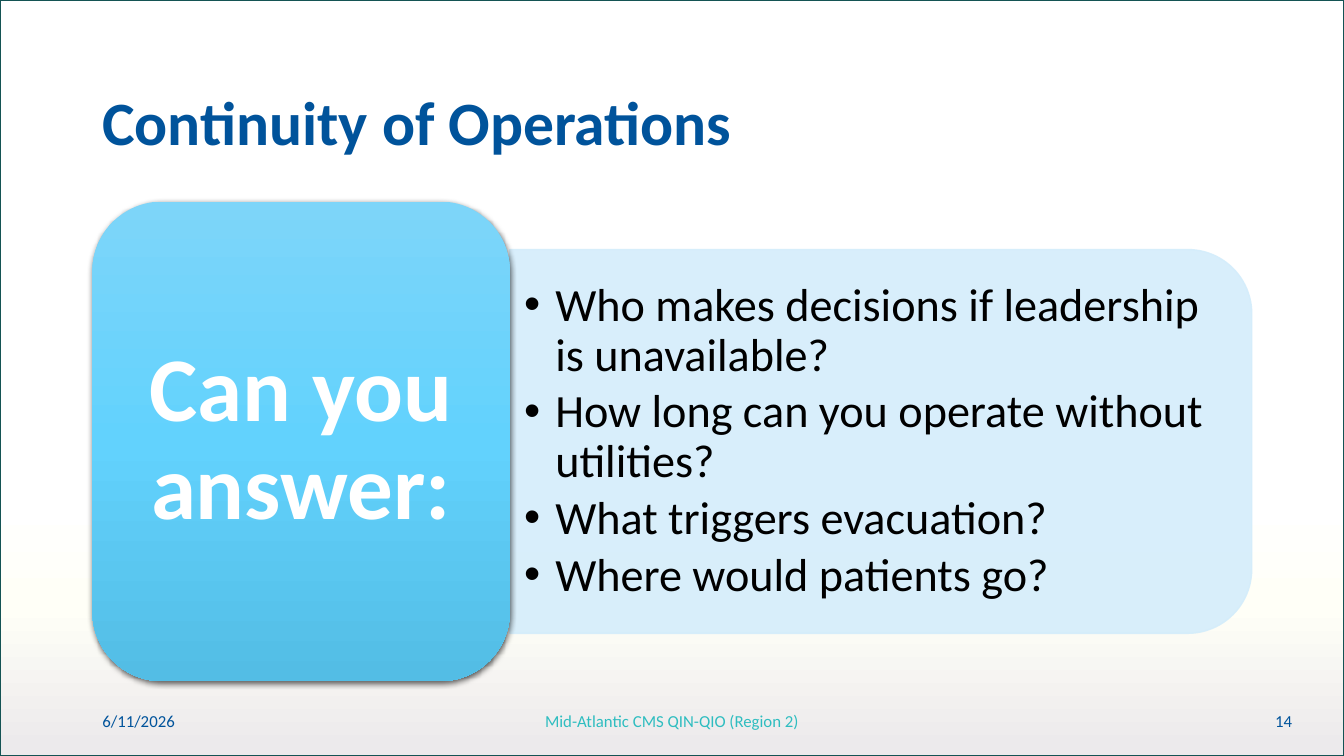
from dataclasses import dataclass
from typing import NamedTuple

from lxml.etree import SubElement
from pptx import Presentation
from pptx.dml.color import RGBColor
from pptx.enum.shapes import MSO_SHAPE
from pptx.enum.text import MSO_ANCHOR, PP_ALIGN
from pptx.oxml.ns import qn
from pptx.util import Inches, Pt

COLORS = {
    "navy": "00539B", "teal": "2EBDC0", "frame": "145354", "panel": "D4EDFB",
    "white": "FFFFFF", "black": "000000", "ivory": "FFFFF7", "mist": "ECEAEC",
    "sky_light": "7DD5F9", "sky": "62D2FD", "sky_deep": "53BDE5",
}
COLS, ROWS = 160, 90
WIDTH, HEIGHT = Inches(13.33), Inches(7.5)


class Area(NamedTuple):
    col: float
    row: float
    cols: float
    rows: float

    def emu(self) -> tuple[int, int, int, int]:
        return (round(self.col * WIDTH / COLS), round(self.row * HEIGHT / ROWS),
                round(self.cols * WIDTH / COLS), round(self.rows * HEIGHT / ROWS))


@dataclass(frozen=True)
class Label:
    area: Area
    lines: tuple[str, ...]
    size: int
    color: str
    bold: bool = False
    align: PP_ALIGN = PP_ALIGN.LEFT
    inset: tuple[float, float] = (0.1, 0.05)
    line_spacing: float = 1.0
    space_after: float = 0
    bulleted: bool = False


FOOTER_ROW, FOOTER_ROWS = 83.4, 4.8
CARD = Area(11, 24, 49.7, 57.1)
PANEL = Area(82, 8.4, 45.7, 88.3)

LABELS = (
    Label(Area(11, 10.3, 103.7, 9.2), ("Continuity of Operations",), 44, "navy",
          bold=True, line_spacing=0.9),
    Label(Area(11, FOOTER_ROW, 22.2, FOOTER_ROWS), ("6/11/2026",), 12, "navy"),
    Label(Area(53, FOOTER_ROW, 54, FOOTER_ROWS),
          ("Mid-Atlantic CMS QIN-QIO (Region 2)",), 12, "teal", align=PP_ALIGN.CENTER),
    Label(Area(119, FOOTER_ROW, 36, FOOTER_ROWS), ("14",), 12, "navy",
          align=PP_ALIGN.RIGHT),
    Label(Area(60.7, 31.9, 86, 41.3),
          ("Who makes decisions if leadership is unavailable?",
           "How long can you operate without utilities?",
           "What triggers evacuation?",
           "Where would patients go?"),
          33, "black", inset=(0.14, 0.07), line_spacing=0.9, space_after=5,
          bulleted=True),
    Label(Area(13.4, 26.4, 44.9, 52.2), ("Can you answer:",), 65, "white", bold=True,
          align=PP_ALIGN.CENTER, inset=(0.27, 0.14), line_spacing=0.9),
)


def rgb(name: str) -> RGBColor:
    return RGBColor.from_string(COLORS[name])


def add_block(slide, kind: MSO_SHAPE, area: Area):
    sp = slide.shapes.add_shape(kind, *area.emu())
    sp.shadow.inherit = False
    return sp


def fill_down(sp, stops: dict[int, str]) -> None:
    """Fill top to bottom, with stops given as percent and colour name."""
    sp.fill.gradient()
    sp.fill.gradient_angle = 270
    stop_list = sp._element.spPr.find(qn("a:gradFill")).find(qn("a:gsLst"))
    stop_list.clear()
    for percent, name in stops.items():
        gs = SubElement(stop_list, qn("a:gs"), pos=str(percent * 1000))
        SubElement(gs, qn("a:srgbClr"), val=COLORS[name])


def set_alpha(fill_element, percent: int) -> None:
    color = fill_element.find(qn("a:solidFill")).find(qn("a:srgbClr"))
    SubElement(color, qn("a:alpha"), val=str(percent * 1000))


def add_backdrop(slide) -> None:
    sp = add_block(slide, MSO_SHAPE.RECTANGLE, Area(0, 0, COLS, ROWS))
    fill_down(sp, {66: "white", 80: "ivory", 99: "mist"})
    sp.line.color.rgb = rgb("frame")
    sp.line.width = Pt(1.5)


def add_panel(slide) -> None:
    sp = add_block(slide, MSO_SHAPE.ROUND_2_SAME_RECTANGLE, PANEL)
    sp.rotation = 90
    sp.fill.solid()
    sp.fill.fore_color.rgb = rgb("panel")
    sp.line.color.rgb = rgb("panel")
    sp.line.width = Pt(1)
    spPr = sp._element.spPr
    for part in (spPr, spPr.find(qn("a:ln"))):
        set_alpha(part, 90)


def add_card(slide) -> None:
    sp = add_block(slide, MSO_SHAPE.ROUNDED_RECTANGLE, CARD)
    fill_down(sp, {0: "sky_light", 50: "sky", 100: "sky_deep"})
    sp.line.fill.background()
    effects = sp._element.spPr.find(qn("a:effectLst"))
    shadow = SubElement(effects, qn("a:outerShdw"), blurRad=str(Pt(4.5)),
                        dist=str(Pt(1.5)), dir="5400000", rotWithShape="0")
    color = SubElement(shadow, qn("a:srgbClr"), val=COLORS["black"])
    SubElement(color, qn("a:alpha"), val="63000")


def add_bullet(p) -> None:
    pPr = p._p.get_or_add_pPr()
    pPr.set("marL", str(Inches(0.31)))
    pPr.set("indent", str(Inches(-0.31)))
    SubElement(pPr, qn("a:buFont"), typeface="Arial")
    SubElement(pPr, qn("a:buChar"), char="•")


def add_label(slide, label: Label) -> None:
    tf = slide.shapes.add_textbox(*label.area.emu()).text_frame
    tf.word_wrap = True
    tf.vertical_anchor = MSO_ANCHOR.MIDDLE
    tf.margin_left = tf.margin_right = Inches(label.inset[0])
    tf.margin_top = tf.margin_bottom = Inches(label.inset[1])
    tf.text = "\n".join(label.lines)
    for p in tf.paragraphs:
        if label.bulleted:
            add_bullet(p)
        p.alignment = label.align
        p.line_spacing = label.line_spacing
        p.space_after = Pt(label.space_after)
        for r in p.runs:
            r.font.name = "Calibri"
            r.font.size = Pt(label.size)
            r.font.bold = label.bold
            r.font.color.rgb = rgb(label.color)


def main() -> None:
    prs = Presentation()
    prs.slide_width, prs.slide_height = WIDTH, HEIGHT
    slide = prs.slides.add_slide(prs.slide_layouts[6])
    add_backdrop(slide)
    add_panel(slide)
    add_card(slide)
    for label in LABELS:
        add_label(slide, label)
    prs.save("out.pptx")


if __name__ == "__main__":
    main()
